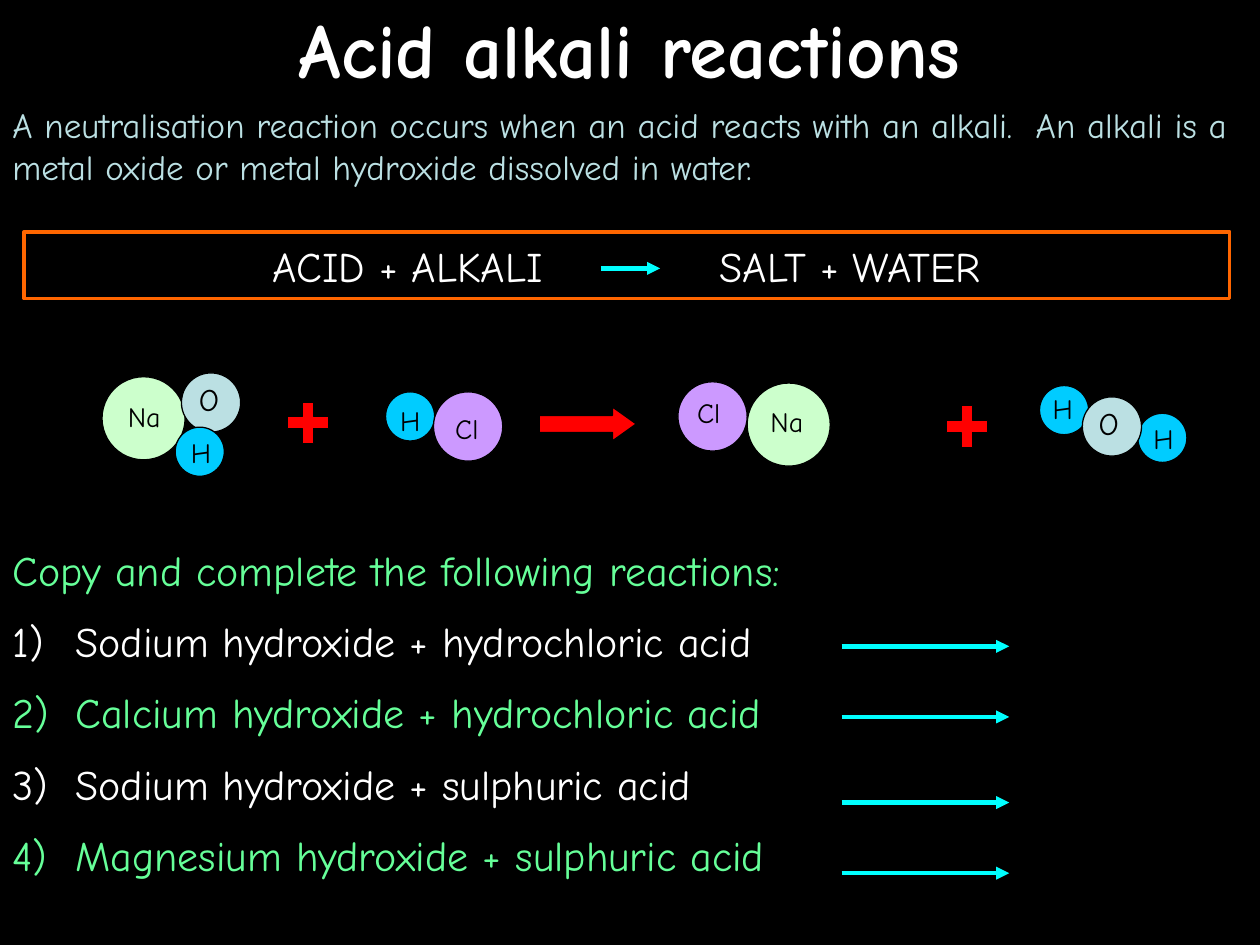
import collections

import lxml.etree
import pptx
import pptx.dml.color
import pptx.enum.shapes
import pptx.enum.text
import pptx.oxml.ns
import pptx.util

RGBColor = pptx.dml.color.RGBColor
SHAPE = pptx.enum.shapes.MSO_SHAPE
ALIGN = pptx.enum.text.PP_ALIGN
ANCHOR = pptx.enum.text.MSO_ANCHOR

BLACK = RGBColor(0x00, 0x00, 0x00)
WHITE = RGBColor(0xFF, 0xFF, 0xFF)
PALE_BLUE = RGBColor(0xBB, 0xE0, 0xE3)
ORANGE = RGBColor(0xFF, 0x66, 0x00)
CYAN = RGBColor(0x00, 0xFF, 0xFF)
MINT = RGBColor(0xCC, 0xFF, 0xCC)
PURPLE = RGBColor(0xCC, 0x99, 0xFF)
SKY = RGBColor(0x00, 0xCC, 0xFF)
RED = RGBColor(0xFF, 0x00, 0x00)
GREEN = RGBColor(0x66, 0xFF, 0x99)
FONT = "Comic Neue"

# The page is a square grid of 100 columns by 75 rows.
COLUMNS, ROWS = 100, 75
CELL = pptx.util.Inches(0.1)

Box = collections.namedtuple("Box", "left top width height")
Element = collections.namedtuple("Element", "diameter colour label_width label_height size")
ELEMENTS = {
    "Na": Element(6.6, MINT, 5.5, 3.7, 16),
    "Cl": Element(5.5, PURPLE, 5.5, 3.7, 16),
    "O": Element(4.7, PALE_BLUE, 3.2, 4.0, 18),
    "H": Element(3.9, SKY, 5.5, 3.7, 16),
}


def cells(*counts):
    return [round(count * CELL) for count in counts]


def inside(box, left, top, width, height):
    """Box whose corner is counted from the corner of another box."""
    return Box(box.left + left, box.top + top, width, height)


def add_xml(parent, tag, **attributes):
    return lxml.etree.SubElement(parent, pptx.oxml.ns.qn(tag), **attributes)


def write(frame, text, *, size, colour, bold=False, align=ALIGN.LEFT, gap=0):
    """Put text in the empty first paragraph, or in a new one, and return it."""
    para = frame.paragraphs[0]
    if para.runs:
        para = frame.add_paragraph()
        para.space_before = pptx.util.Pt(gap)
    para.alignment = align
    span = para.add_run()
    span.text = text
    span.font.name = FONT
    span.font.size = pptx.util.Pt(size)
    span.font.bold = bold
    span.font.color.rgb = colour
    return para


def add_frame(page, box, wrap=True, anchor=ANCHOR.TOP):
    frame = page.shapes.add_textbox(*cells(*box)).text_frame
    frame.word_wrap = wrap
    frame.vertical_anchor = anchor
    return frame


def add_figure(page, kind, box, fill=None, line=BLACK, width=0.75, adjustments=()):
    figure = page.shapes.add_shape(kind, *cells(*box))
    figure.shadow.inherit = False
    if fill is None:
        figure.fill.background()
    else:
        figure.fill.solid()
        figure.fill.fore_color.rgb = fill
    figure.line.color.rgb = line
    figure.line.width = pptx.util.Pt(width)
    for index, value in enumerate(adjustments):
        figure.adjustments[index] = value
    return figure


def add_arrow(page, left, right, height):
    arrow = page.shapes.add_connector(
        pptx.enum.shapes.MSO_CONNECTOR.STRAIGHT, *cells(left, height, right, height))
    arrow.line.color.rgb = CYAN
    arrow.line.width = pptx.util.Pt(2.5)
    add_xml(arrow.line._get_or_add_ln(), "a:tailEnd", type="triangle")
    add_xml(arrow._element.spPr, "a:effectLst")


def add_heading(page, box):
    title = add_frame(page, inside(box, 0, 0, box.width, 7.6), anchor=ANCHOR.MIDDLE)
    write(title, "Acid alkali reactions", size=44, colour=WHITE, bold=True,
          align=ALIGN.CENTER)
    definition = add_frame(page, inside(box, 0, 7.7, box.width, 7.7))
    write(definition,
          "A neutralisation reaction occurs when an acid reacts with an alkali.  "
          "An alkali is a metal oxide or metal hydroxide dissolved in water.",
          size=20, colour=PALE_BLUE)


def add_word_equation(page, box):
    frame = add_figure(page, SHAPE.RECTANGLE, box, line=ORANGE, width=2).text_frame
    frame.vertical_anchor = ANCHOR.MIDDLE
    frame.margin_left, tab = cells(19.7, 35.5)
    para = write(frame, "ACID + ALKALI\tSALT + WATER", size=24, colour=WHITE)
    stops = add_xml(para._p.get_or_add_pPr(), "a:tabLst")
    add_xml(stops, "a:tab", pos=str(tab), algn="l")
    add_arrow(page, box.left + 45.8, box.left + 50.5, box.top + 2.9)


def add_molecule(page, box, atoms):
    """Draw atoms, each a symbol, the corner of its disc and the shift of its label."""
    for symbol, left, top, shift_x, shift_y in atoms:
        element = ELEMENTS[symbol]
        disc = inside(box, left, top, element.diameter, element.diameter)
        add_figure(page, SHAPE.OVAL, disc, element.colour)
        label = inside(disc, shift_x, shift_y, element.label_width, element.label_height)
        write(add_frame(page, label, wrap=False), symbol, size=element.size,
              colour=BLACK, align=ALIGN.CENTER)


def add_molecule_equation(page, box):
    molecules = [
        (0, [("Na", 0, 0.3, 0.6, 1.3), ("O", 6.3, 0, 0.4, 0.1),
             ("H", 5.8, 4.3, -0.7, 0.2)]),
        (22.5, [("H", 0, 1.5, -0.8, 0.4), ("Cl", 3.8, 1.5, -0.1, 1.1)]),
        (45.7, [("Na", 5.5, 0.8, 0.4, 1.2), ("Cl", 0, 0.7, -0.3, 0.6)]),
        (74.4, [("H", 7.8, 3.2, -0.7, 0.2), ("H", 0, 1, -0.9, 0),
                ("O", 3.4, 1.9, 0.3, 0.1)]),
    ]
    for left, atoms in molecules:
        add_molecule(page, inside(box, left, 0, box.width, box.height), atoms)
    for left, top in ((14.7, 2.3), (67, 2.6)):
        add_figure(page, SHAPE.CROSS, inside(box, left, top, 3.3, 3.3), RED,
                   adjustments=(0.36,))
    add_figure(page, SHAPE.RIGHT_ARROW, inside(box, 34.7, 2.7, 7.7, 2.7), RED,
               adjustments=(0.5, 0.7))


def add_exercise(page, box):
    frame = add_frame(page, box)
    write(frame, "Copy and complete the following reactions:", size=24, colour=GREEN)
    reactions = [
        ("Sodium hydroxide + hydrochloric acid", WHITE, 8.6),
        ("Calcium hydroxide + hydrochloric acid", GREEN, 14.2),
        ("Sodium hydroxide + sulphuric acid", WHITE, 21),
        ("Magnesium hydroxide + sulphuric acid", GREEN, 26.6),
    ]
    indent = pptx.util.Inches(0.5)
    for text, colour, arrow_row in reactions:
        para = write(frame, text, size=24, colour=colour, gap=12)
        settings = para._p.get_or_add_pPr()
        settings.set("marL", str(indent))
        settings.set("indent", str(-indent))
        add_xml(settings, "a:buFont", typeface=FONT)
        add_xml(settings, "a:buAutoNum", type="arabicParenR")
        add_arrow(page, box.left + 66.8, box.left + 80.1, box.top + arrow_row)


def main():
    deck = pptx.Presentation()
    deck.slide_width, deck.slide_height = cells(COLUMNS, ROWS)
    page = deck.slides.add_slide(deck.slide_layouts[6])
    page.background.fill.solid()
    page.background.fill.fore_color.rgb = BLACK
    add_heading(page, Box(0, 0, COLUMNS, 15.4))
    add_word_equation(page, Box(1.9, 18.4, 95.7, 5.3))
    add_molecule_equation(page, Box(8.1, 29.6, 86.1, 8.2))
    add_exercise(page, Box(0, 42.7, 94.2, 29))
    deck.save("out.pptx")


if __name__ == "__main__":
    main()
